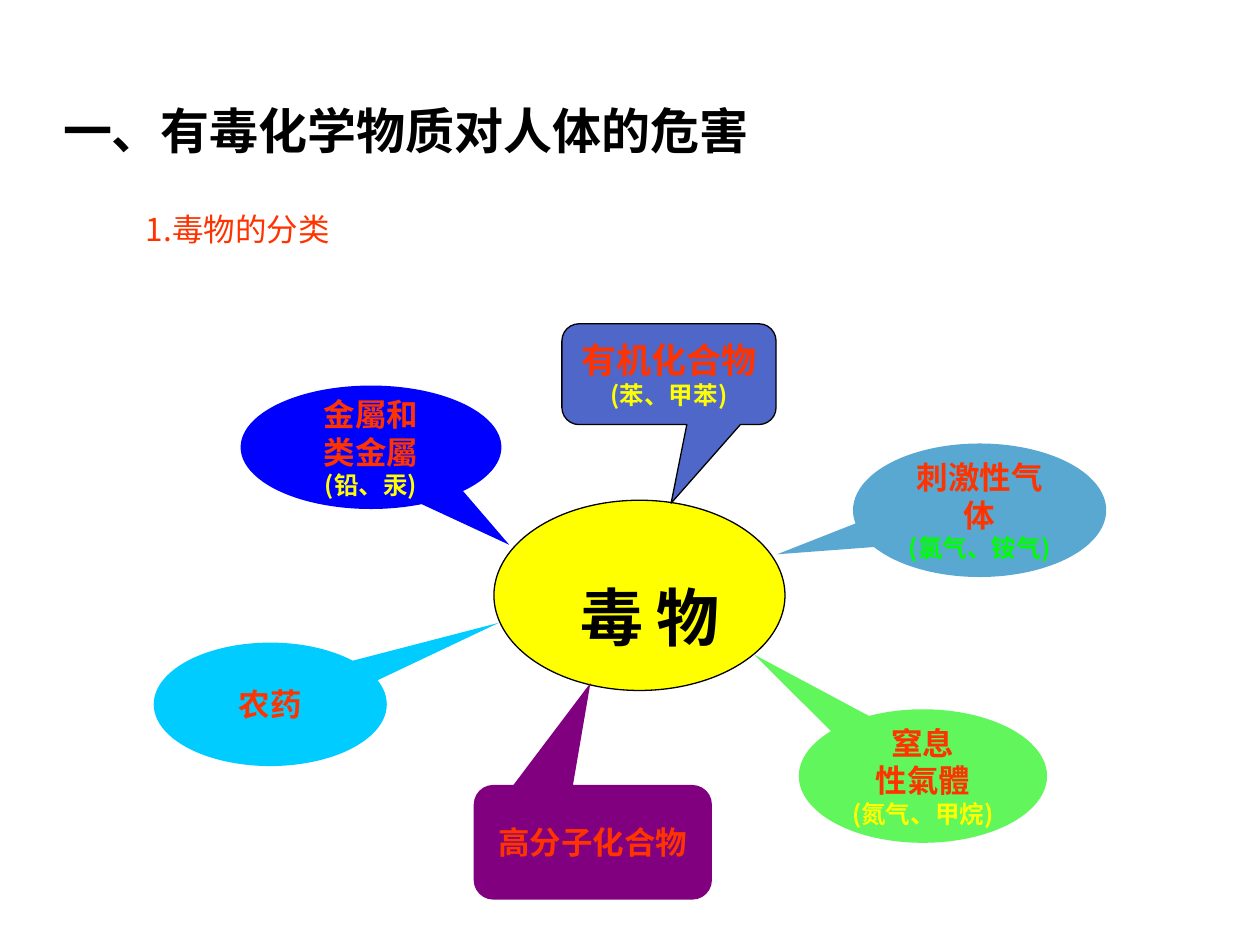
from pptx import Presentation
from pptx.dml.color import RGBColor
from pptx.enum.shapes import MSO_SHAPE as Shape
from pptx.enum.text import MSO_ANCHOR as Anchor, MSO_AUTO_SIZE as AutoSize, PP_ALIGN as Align
from pptx.oxml.ns import qn
from pptx.util import Inches, Pt

FONT = "Noto Sans CJK SC"
BLACK = RGBColor(0x00, 0x00, 0x00)
ORANGE = RGBColor(0xFF, 0x33, 0x00)
YELLOW = RGBColor(0xFF, 0xFF, 0x00)
LIME = RGBColor(0x00, 0xFF, 0x00)
STEEL = RGBColor(0x59, 0xA8, 0xD1)
BLUE = RGBColor(0x00, 0x00, 0xFF)
SKY = RGBColor(0x00, 0xCC, 0xFF)
GREEN = RGBColor(0x60, 0xF6, 0x5C)
INDIGO = RGBColor(0x4E, 0x67, 0xC8)
PURPLE = RGBColor(0x80, 0x00, 0x80)

HEADING = dict(size=Pt(28), bold=True, color=BLACK)
SUBHEADING = dict(size=Pt(18), bold=False, color=ORANGE)
HUB = dict(size=Pt(36), bold=True, color=BLACK)
CLASS_NAME = dict(size=Pt(18), bold=True, color=ORANGE)
LARGE_NAME = dict(CLASS_NAME, size=Pt(20))
EXAMPLE = dict(size=Pt(14), bold=True, color=YELLOW)
LIME_EXAMPLE = dict(EXAMPLE, color=LIME)

OVAL = Shape.OVAL_CALLOUT
ROUNDED = Shape.ROUNDED_RECTANGULAR_CALLOUT

# Callout: kind, box, pointer adjustments, fill, outlined, paragraphs of (text, style) runs
CALLOUTS = [
    (OVAL, (6.77, 3.52, 2.01, 1.06), (-0.8, 0.33), STEEL, False,
     [[("刺激性气体", CLASS_NAME)], [("(氯气、铵气)", LIME_EXAMPLE)]]),
    (OVAL, (1.91, 3.06, 2.07, 0.98), (0.53, 0.79), BLUE, False,
     [[("金屬和", CLASS_NAME)], [("类金屬", CLASS_NAME)], [("(铅、汞)", EXAMPLE)]]),
    (OVAL, (1.22, 5.1, 1.85, 0.98), (0.98, -0.66), SKY, False,
     [[("农药", CLASS_NAME)]]),
    (OVAL, (6.34, 5.63, 1.97, 1.06), (-0.68, -0.91), GREEN, False,
     [[("窒息", CLASS_NAME)], [("性氣體", CLASS_NAME)], [("(氮气、甲烷)", EXAMPLE)]]),
    (ROUNDED, (4.46, 2.57, 1.7, 0.8), (0.01, 1.28, 0.17), INDIGO, True,
     [[("有机化合物", LARGE_NAME), ("(苯、甲苯)", EXAMPLE)]]),
    (ROUNDED, (3.76, 6.23, 1.89, 0.91), (-0.01, -1.39, 0.17), PURPLE, False,
     [[("高分子化合物", CLASS_NAME)]]),
]


def inches(box):
    return [Inches(value) for value in box]


def add_run(paragraph, text, style):
    run = paragraph.add_run()
    run.text = text
    for name, value in style.items():
        if name == "color":
            run.font.color.rgb = value
        else:
            setattr(run.font, name, value)
    run.font.name = FONT
    properties = run.font._element
    properties.get_or_add_latin().addnext(
        properties.makeelement(qn("a:ea"), {"typeface": FONT}))


def write(frame, paragraphs, align):
    for index, runs in enumerate(paragraphs):
        paragraph = frame.paragraphs[0] if index == 0 else frame.add_paragraph()
        paragraph.alignment = align
        for text, style in runs:
            add_run(paragraph, text, style)


def add_filled_shape(slide, kind, box, fill, outlined):
    shape = slide.shapes.add_shape(kind, *inches(box))
    shape.shadow.inherit = False
    shape.fill.solid()
    shape.fill.fore_color.rgb = fill
    if outlined:
        shape.line.color.rgb = BLACK
        shape.line.width = Pt(0.75)
    else:
        shape.line.fill.background()
    return shape


def add_label(slide, box, text, style, align):
    label = slide.shapes.add_textbox(*inches(box))
    label.text_frame.word_wrap = False
    write(label.text_frame, [[(text, style)]], align)
    return label


def place_title(slide, box, text):
    title = slide.shapes.title
    title.left, title.top, title.width, title.height = inches(box)
    frame = title.text_frame
    settings = dict(auto_size=AutoSize.NONE, word_wrap=True,
                    vertical_anchor=Anchor.MIDDLE, margin_left=Inches(0.15),
                    margin_bottom=Inches(0.13))
    for name, value in settings.items():
        setattr(frame, name, value)
    write(frame, [[(text, HEADING)]], Align.LEFT)
    frame.paragraphs[0].space_after = Pt(3)


def add_callout(slide, kind, box, adjustments, fill, outlined, paragraphs):
    callout = add_filled_shape(slide, kind, box, fill, outlined)
    for index, value in enumerate(adjustments):
        callout.adjustments[index] = value
    callout.text_frame.word_wrap = True
    callout.text_frame.vertical_anchor = Anchor.MIDDLE
    write(callout.text_frame, paragraphs, Align.CENTER)


def add_poison_map(slide):
    # Central ellipse
    add_filled_shape(slide, Shape.OVAL, (3.92, 3.97, 2.31, 1.51), YELLOW, True)
    # Classes pointing at the centre
    for callout in CALLOUTS:
        add_callout(slide, *callout)
    # Central word, with wide letter spacing, in a box that holds it on one line
    hub = add_label(slide, (4.36, 4.54, 1.6, 0.72), "毒物", HUB, Align.CENTER)
    hub.rotation = -0.2
    hub.text_frame.paragraphs[0].runs[0].font._element.set("spc", "720")


def main():
    presentation = Presentation()
    presentation.slide_width, presentation.slide_height = Inches(10), Inches(7.5)
    slide = presentation.slides.add_slide(presentation.slide_layouts[5])
    place_title(slide, (0.35, 0.76, 8.33, 0.63), "一、有毒化学物质对人体的危害")
    add_poison_map(slide)
    add_label(slide, (1.06, 1.62, 1.73, 0.4), "1.毒物的分类", SUBHEADING, Align.LEFT)
    presentation.save("out.pptx")


if __name__ == "__main__":
    main()
